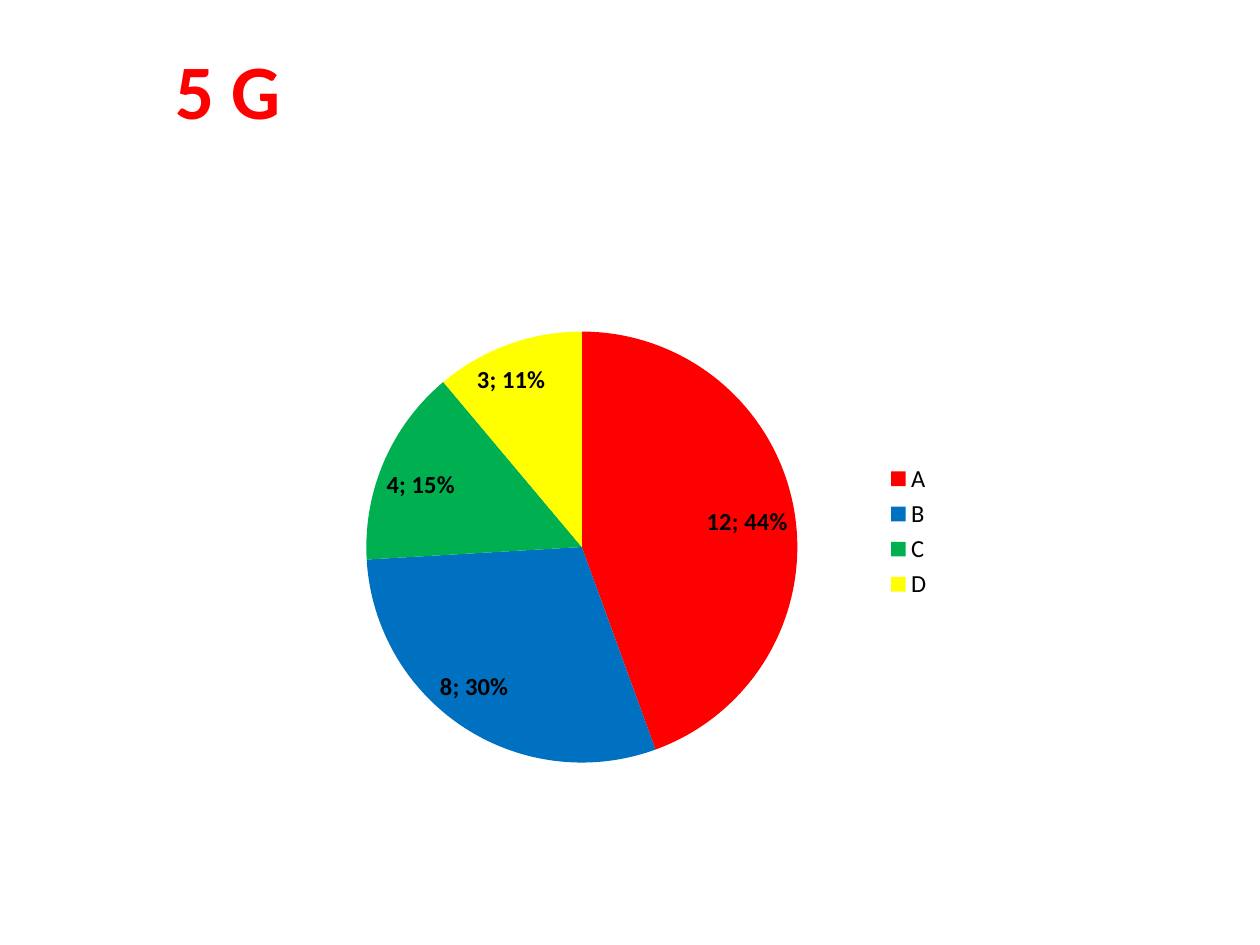
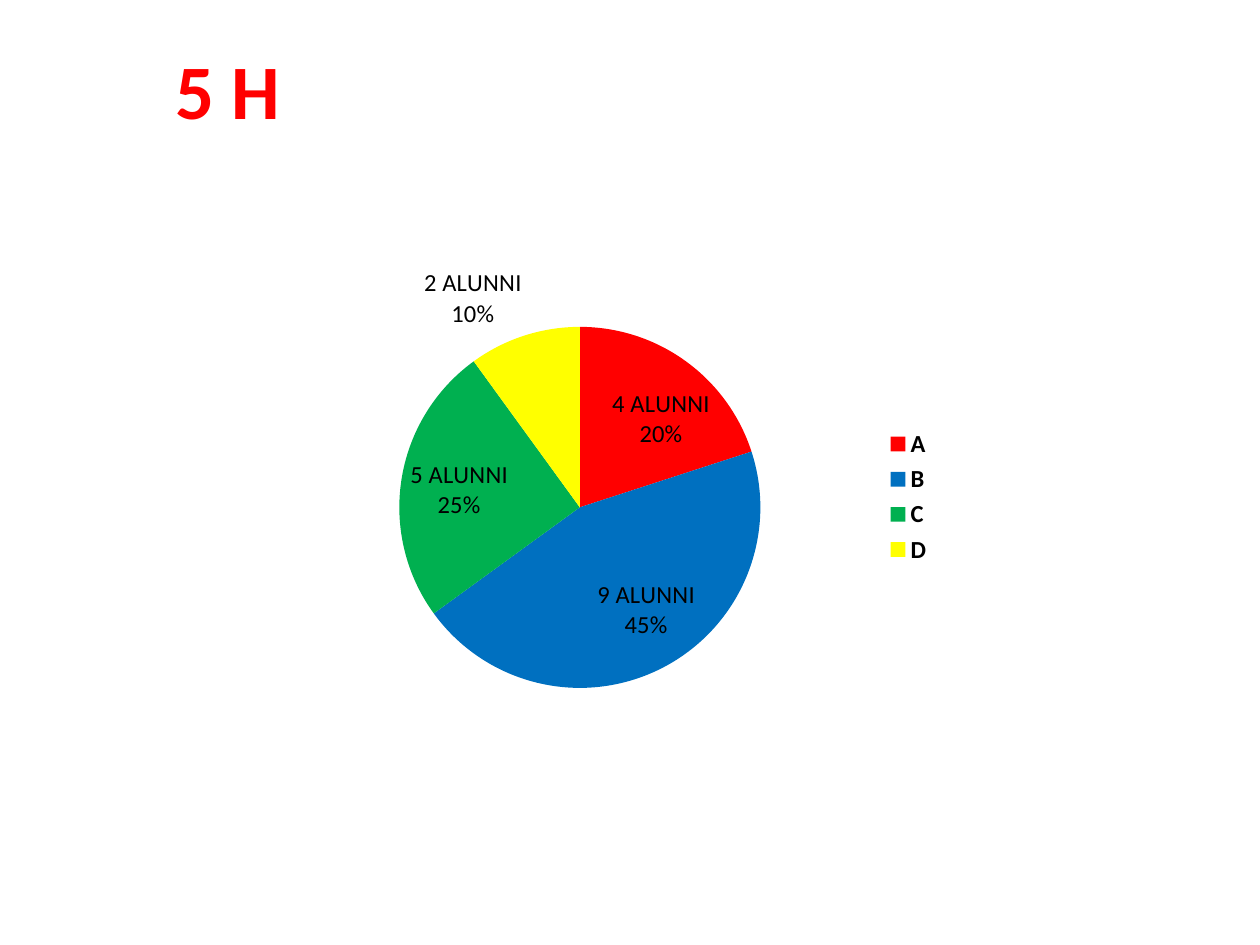
from lxml.etree import SubElement
from pptx import Presentation
from pptx.chart.data import CategoryChartData
from pptx.dml.color import RGBColor
from pptx.enum.chart import XL_CHART_TYPE, XL_LABEL_POSITION, XL_LEGEND_POSITION
from pptx.enum.text import MSO_AUTO_SIZE, PP_ALIGN
from pptx.oxml.ns import qn
from pptx.util import Cm, Pt

FONT = "Calibri"
COLORS = {"title": "FF0000", "text": "000000",
          "A": "FF0000", "B": "0070C0", "C": "00B050", "D": "FFFF00"}
GRADES = ["A", "B", "C", "D"]
CHART_LEFT, CHART_WIDTH = 4.29, 14.76

# One entry per class; lengths in cm, pie = centre x, centre y, diameter
CLASSES = [
    {"title": "5 G", "values": [12, 8, 4, 3], "top": 5.71, "height": 10.01,
     "pie": (11.73, 11.03, 8.69), "legend_bold": False, "labels": []},
    {"title": "5 H", "values": [4, 9, 5, 2], "top": 4.72, "height": 10.59,
     "pie": (11.69, 10.23, 7.28), "legend_bold": True,
     "labels": ["4 ALUNNI\n20%", "9 ALUNNI\n45%", "5 ALUNNI\n25%", "2 ALUNNI\n10%"]},
]


def write(tf, text, size=14, bold=False, color="text", align=PP_ALIGN.CENTER):
    tf.text = text
    for p in tf.paragraphs:
        p.alignment = align
        for r in p.runs:
            r.font.name, r.font.size, r.font.bold = FONT, Pt(size), bold
            r.font.color.rgb = RGBColor.from_string(COLORS[color])


def place_pie(chart, pie, top, height):
    cx, cy, d = pie
    area = chart.element.find(".//" + qn("c:plotArea"))
    layout = area.find(qn("c:layout"))
    if layout is None:
        layout = SubElement(area, qn("c:layout"))
        area.insert(0, layout)
    manual = SubElement(layout, qn("c:manualLayout"))
    settings = [("layoutTarget", "inner"), ("xMode", "edge"), ("yMode", "edge"),
                ("x", (cx - d / 2 - CHART_LEFT) / CHART_WIDTH),
                ("y", (cy - d / 2 - top) / height),
                ("w", d / CHART_WIDTH), ("h", d / height)]
    for tag, val in settings:
        SubElement(manual, qn("c:" + tag)).set("val", str(val))


prs = Presentation()
prs.slide_width, prs.slide_height = Cm(25.4), Cm(19.05)

for item in CLASSES:
    s = prs.slides.add_slide(prs.slide_layouts[6])

    # Title
    tf = s.shapes.add_textbox(Cm(2.1), Cm(0.74), Cm(5), Cm(2.13)).text_frame
    tf.word_wrap = True
    tf.auto_size = MSO_AUTO_SIZE.SHAPE_TO_FIT_TEXT
    write(tf, item["title"], size=44, bold=True, color="title")

    # Pie chart
    data = CategoryChartData()
    data.categories = GRADES
    data.add_series("Series 1", item["values"])
    chart = s.shapes.add_chart(XL_CHART_TYPE.PIE, Cm(CHART_LEFT), Cm(item["top"]),
                               Cm(CHART_WIDTH), Cm(item["height"]), data).chart
    chart.has_title = False
    chart.font.name, chart.font.size = FONT, Pt(10)
    chart.font.color.rgb = RGBColor.from_string(COLORS["text"])
    place_pie(chart, item["pie"], item["top"], item["height"])

    # Legend
    chart.has_legend = True
    legend = chart.legend
    legend.position = XL_LEGEND_POSITION.RIGHT
    legend.include_in_layout = False
    legend.font.name, legend.font.size = FONT, Pt(14)
    legend.font.bold = item["legend_bold"]

    # Slices
    plot = chart.plots[0]
    plot.vary_by_categories = True
    series = plot.series[0]
    for i, grade in enumerate(GRADES):
        fill = series.points[i].format.fill
        fill.solid()
        fill.fore_color.rgb = RGBColor.from_string(COLORS[grade])

    # Value and percentage labels
    labels = series.data_labels
    labels.show_value = labels.show_percentage = True
    labels.position = XL_LABEL_POSITION.BEST_FIT
    labels.font.name, labels.font.size, labels.font.bold = FONT, Pt(14), True
    labels.font.color.rgb = RGBColor.from_string(COLORS["text"])
    dlbls = labels._element
    separator = SubElement(dlbls, qn("c:separator"))
    separator.text = "; "
    dlbls.find(qn("c:showBubbleSize")).addnext(separator)

    # Labels with their own wording
    for i, text in enumerate(item["labels"]):
        label = series.points[i].data_label
        write(label.text_frame, text)
        label.position = XL_LABEL_POSITION.BEST_FIT

prs.save("out.pptx")
